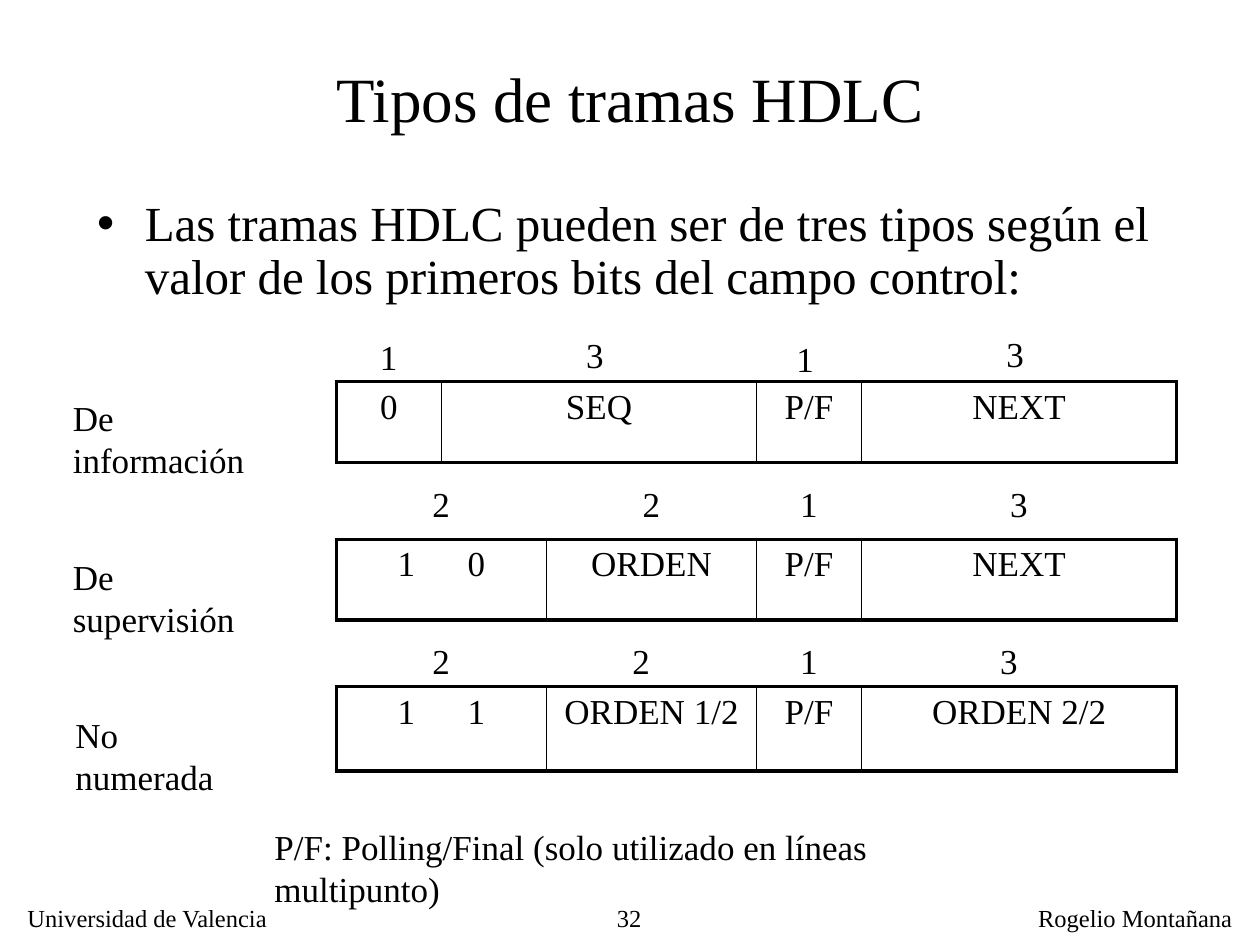
from lxml import etree
from pptx import Presentation
from pptx.dml.color import RGBColor
from pptx.enum.text import MSO_ANCHOR as ANCHOR, MSO_AUTO_SIZE as AUTO, PP_ALIGN as ALIGN
from pptx.oxml.ns import qn
from pptx.util import Inches, Pt

# Content
TITLE = "Tipos de tramas HDLC"
INTRO = ("Las tramas HDLC pueden ser de tres tipos según el "
         "valor de los primeros bits del campo control:")
NOTE = "P/F: Polling/Final (solo utilizado en líneas multipunto)"
# Each field: bits, content, then the offset of its bit count (x, y).
# A tuple as content holds bits that are set apart.
FRAMES = [
    dict(label="De información", label_at=(0.48, 3.10), width=1.95, inset=0.4,
         top=3.03, height=0.64, count_top=2.61,
         fields=[(1, "0", 0, 0), (3, "SEQ", -0.03, -0.01),
                 (1, "P/F", -0.03, 0.02), (3, "NEXT", -0.03, -0.02)]),
    dict(label="De supervisión", label_at=(0.48, 4.36), width=1.87, inset=0.4,
         top=4.28, height=0.64, count_top=3.78,
         fields=[(2, ("1", "0"), 0, 0), (2, "ORDEN", 0, 0),
                 (1, "P/F", 0, 0), (3, "NEXT", 0, 0)]),
    dict(label="No numerada", label_at=(0.50, 5.61), width=1.70, inset=0.1,
         top=5.45, height=0.67, count_top=5.03,
         fields=[(2, ("1", "1"), 0, 0), (2, "ORDEN 1/2", -0.08, 0),
                 (1, "P/F", 0, 0), (3, "ORDEN 2/2", -0.08, 0)]),
]
FOOTER = [  # text, left, top, width, height, alignment
    ("32", 4.13, 7.12, 1.06, 0.31, ALIGN.RIGHT),
    ("Universidad de Valencia", 0.12, 7.12, 2.13, 0.33, ALIGN.LEFT),
    ("Rogelio Montañana", 8.14, 7.12, 1.74, 0.33, ALIGN.LEFT),
]

# Style and grid
FONT = "Times New Roman"
BLACK = RGBColor(0, 0, 0)
THIN, THICK = 1, 2.25
TABLE_LEFT, TABLE_WIDTH, TOTAL_BITS = 2.67, 6.67, 8
BIT = TABLE_WIDTH / TOTAL_BITS
COUNT_W, LINE_H = 0.34, 0.43


def add_run(p, text, size):
    r = p.add_run()
    r.text = text
    r.font.size, r.font.name = Pt(size), FONT
    r.font.color.rgb = BLACK
    return r


def place(sp, left, top, width, height):
    sp.left, sp.top = Inches(left), Inches(top)
    sp.width, sp.height = Inches(width), Inches(height)


def add_text(s, text, left, top, width, height, size=20, align=ALIGN.LEFT,
             wrap=False, inset=0.1):
    tb = s.shapes.add_textbox(Inches(left), Inches(top), Inches(width), Inches(height))
    tf = tb.text_frame
    tf.word_wrap, tf.margin_right = wrap, Inches(inset)
    p = tf.paragraphs[0]
    p.alignment = align
    add_run(p, text, size)


def set_space_before(p, percent):
    spc = etree.SubElement(p._p.get_or_add_pPr(), qn("a:spcBef"))
    etree.SubElement(spc, qn("a:spcPct")).set("val", str(percent * 1000))


def set_borders(cell, left, right):
    tc_pr = cell._tc.get_or_add_tcPr()
    for side, width in (("L", left), ("R", right), ("T", THICK), ("B", THICK)):
        ln = etree.SubElement(tc_pr, qn("a:ln" + side), w=str(Pt(width)))
        fill = etree.SubElement(ln, qn("a:solidFill"))
        etree.SubElement(fill, qn("a:srgbClr")).set("val", str(BLACK))


def fill_cell(cell, content):
    p = cell.text_frame.paragraphs[0]
    p.alignment = ALIGN.CENTER
    set_space_before(p, 20)
    if isinstance(content, tuple):
        first, second = content
        add_run(p, first, 20)
        gap = add_run(p, " ", 20)
        gap.font._element.set("spc", "2500")
        add_run(p, second, 20)
    else:
        add_run(p, content, 20)


def add_frame(s, frame):
    fields = frame["fields"]
    table = s.shapes.add_table(
        1, len(fields), Inches(TABLE_LEFT), Inches(frame["top"]),
        Inches(TABLE_WIDTH), Inches(frame["height"])).table
    table.first_row = table.horz_banding = False
    x, last = TABLE_LEFT, len(fields) - 1
    for i, (bits, content, dx, dy) in enumerate(fields):
        width = bits * BIT
        table.columns[i].width = Inches(width)
        cell = table.cell(0, i)
        fill_cell(cell, content)
        set_borders(cell, THICK if i == 0 else THIN, THICK if i == last else THIN)
        cell.fill.background()
        add_text(s, str(bits), x + (width - COUNT_W) / 2 + dx,
                 frame["count_top"] + dy, COUNT_W, LINE_H)
        x += width
    add_text(s, frame["label"], *frame["label_at"], frame["width"], LINE_H,
             wrap=True, inset=frame["inset"])


def main():
    prs = Presentation()
    prs.slide_width, prs.slide_height = Inches(10), Inches(7.5)
    s = prs.slides.add_slide(prs.slide_layouts[1])

    # Title
    title = s.shapes.title
    place(title, 0.75, 0.36, 8.5, 0.83)
    tf = title.text_frame
    tf.auto_size, tf.vertical_anchor = AUTO.NONE, ANCHOR.MIDDLE
    p = tf.paragraphs[0]
    p.alignment = ALIGN.CENTER
    add_run(p, TITLE, 36)

    # Introduction
    body = s.placeholders[1]
    place(body, 0.67, 1.53, 8.58, 1)
    tf = body.text_frame
    tf.auto_size = AUTO.NONE
    p = tf.paragraphs[0]
    p.line_spacing = 0.9
    set_space_before(p, 20)
    p_pr = p._p.get_or_add_pPr()
    p_pr.set("marL", str(Inches(0.38)))
    p_pr.set("indent", str(Inches(-0.38)))
    etree.SubElement(p_pr, qn("a:buChar")).set("char", "•")
    add_run(p, INTRO, 28)

    # Frames, note and footer
    for frame in FRAMES:
        add_frame(s, frame)
    add_text(s, NOTE, 2.08, 6.5, 6.26, LINE_H, wrap=True, inset=0.6)
    for text, left, top, width, height, align in FOOTER:
        add_text(s, text, left, top, width, height, 14, align, wrap=align == ALIGN.RIGHT)

    prs.save("out.pptx")


if __name__ == "__main__":
    main()
